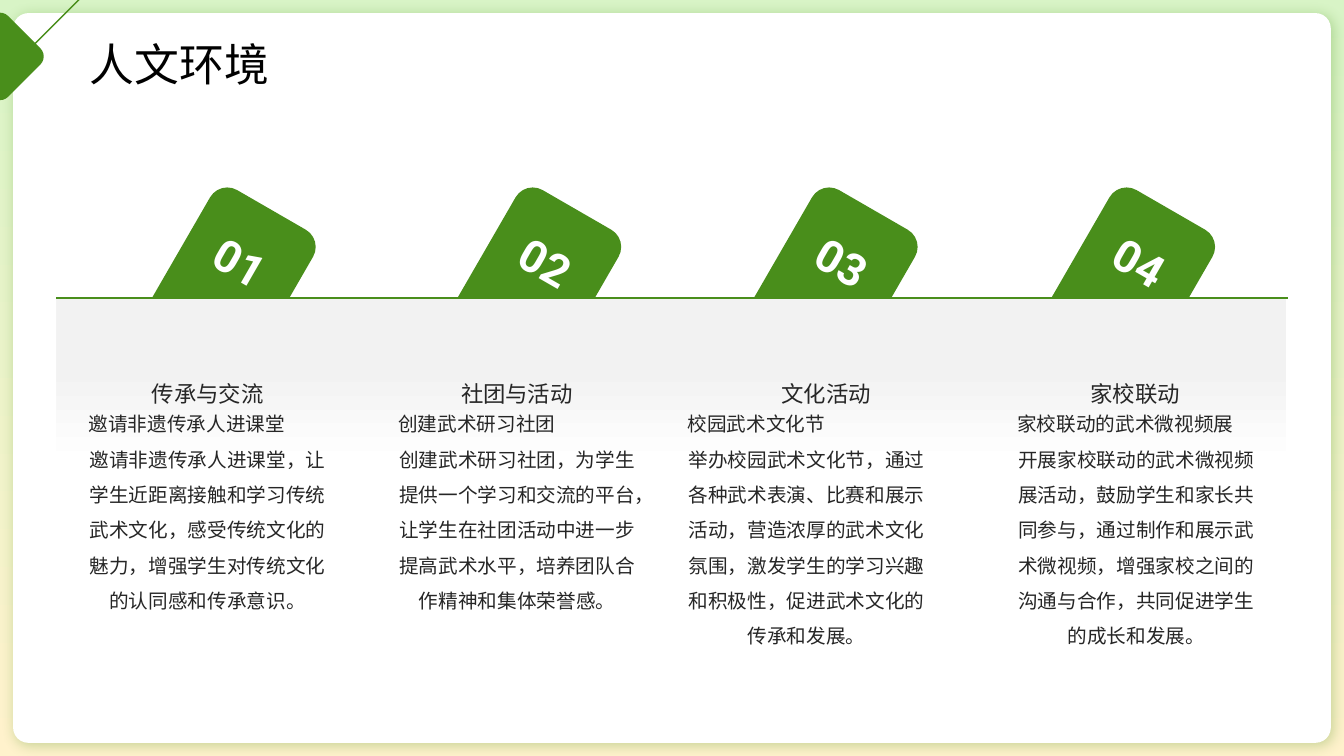
from lxml import etree
from pptx import Presentation
from pptx.dml.color import RGBColor
from pptx.enum import shapes, text
from pptx.oxml.ns import qn
from pptx.util import Inches, Pt

COLORS = {
    "green": "498E1B", "mint": "D8F4C6", "cream": "FFF2CC", "white": "FFFFFF",
    "mist": "F2F2F2", "ink": "262626", "black": "000000",
}
CJK, NUMERIC = "Noto Sans CJK SC", "Roboto"
LEFT, CENTER = text.PP_ALIGN.LEFT, text.PP_ALIGN.CENTER
RECT = shapes.MSO_SHAPE.RECTANGLE
ROUNDED = shapes.MSO_SHAPE.ROUNDED_RECTANGLE

# Tile left, body left, heading, topic, description
COLUMNS = [
    (1.57, 0.88, "传承与交流", "邀请非遗传承人进课堂",
     "邀请非遗传承人进课堂，让学生近距离接触和学习传统武术文化，"
     "感受传统文化的魅力，增强学生对传统文化的认同感和传承意识。"),
    (4.6, 3.95, "社团与活动", "创建武术研习社团",
     "创建武术研习社团，为学生提供一个学习和交流的平台，"
     "让学生在社团活动中进一步提高武术水平，培养团队合作精神和集体荣誉感。"),
    (7.54, 6.82, "文化活动", "校园武术文化节",
     "举办校园武术文化节，通过各种武术表演、比赛和展示活动，"
     "营造浓厚的武术文化氛围，激发学生的学习兴趣和积极性，促进武术文化的传承和发展。"),
    (10.49, 10.09, "家校联动", "家校联动的武术微视频展",
     "开展家校联动的武术微视频展活动，鼓励学生和家长共同参与，"
     "通过制作和展示武术微视频，增强家校之间的沟通与合作，共同促进学生的成长和发展。"),
]


def rgb(name):
    return RGBColor.from_string(COLORS[name])


def add_block(slide, kind, box, color=None, rotation=0):
    block = slide.shapes.add_shape(kind, *map(Inches, box))
    block.shadow.inherit = False
    block.line.fill.background()
    block.rotation = rotation
    if color:
        block.fill.solid()
        block.fill.fore_color.rgb = rgb(color)
    return block


def add_gradient_block(slide, box, stops):
    """Rectangle shaded upwards through (position, colour) stops."""
    block = add_block(slide, RECT, box)
    block.fill.gradient()
    block.fill.gradient_angle = 90
    for stop, (position, color) in zip(block.fill.gradient_stops, stops):
        stop.position = position
        stop.color.rgb = rgb(color)


def add_soft_shadow(block):
    effects = block._element.spPr.find(qn("a:effectLst"))
    shadow = etree.SubElement(
        effects, qn("a:outerShdw"), blurRad=str(Pt(10)), dist=str(Pt(3)),
        dir=str(45 * 60000), algn="tl", rotWithShape="0")
    tint = etree.SubElement(shadow, qn("a:srgbClr"), val=COLORS["green"])
    etree.SubElement(tint, qn("a:alpha"), val="30000")


def add_text(slide, box, lines, size, color="ink", font=CJK, bold=False,
             anchor=text.MSO_ANCHOR.TOP, rotation=0):
    """Text box; each line is (wording, alignment, line spacing)."""
    label = slide.shapes.add_textbox(*map(Inches, box))
    label.rotation = rotation
    frame = label.text_frame
    frame.word_wrap = True
    frame.vertical_anchor = anchor
    frame.margin_left = frame.margin_right = 0
    frame.margin_top = frame.margin_bottom = 0
    for i, (wording, alignment, spacing) in enumerate(lines):
        paragraph = frame.add_paragraph() if i else frame.paragraphs[0]
        paragraph.text = wording
        paragraph.alignment = alignment
        paragraph.line_spacing = spacing
        paragraph.font.size = Pt(size)
        paragraph.font.bold = bold
        paragraph.font.color.rgb = rgb(color)
        paragraph.font.name = font
        defaults = paragraph._p.pPr.find(qn("a:defRPr"))
        etree.SubElement(defaults, qn("a:ea"), typeface=font)


def add_baseline(slide):
    line = slide.shapes.add_connector(
        shapes.MSO_CONNECTOR.STRAIGHT,
        Inches(0.56), Inches(2.96), Inches(12.77), Inches(2.96))
    line.line.color.rgb = rgb("green")
    line.line.width = Pt(1.5)
    etree.SubElement(line._element.spPr, qn("a:effectLst"))


def add_corner(slide):
    outline = [(0.83, -0.05), (-0.71, -0.05), (-0.14, 0.51), (-0.04, 0.58),
               (0.06, 0.6), (0.17, 0.58), (0.27, 0.51)]
    points = [(Inches(x), Inches(y)) for x, y in outline]
    builder = slide.shapes.build_freeform(*points[0])
    builder.add_line_segments(points[1:], close=True)
    frame = builder.convert_to_shape()
    frame.shadow.inherit = False
    frame.fill.background()
    frame.line.color.rgb = rgb("green")
    frame.line.width = Pt(1)
    add_block(slide, ROUNDED, (-0.34, 0.22, 0.68, 0.68), "green", 45)


def main():
    deck = Presentation()
    deck.slide_width, deck.slide_height = Inches(13.33), Inches(7.5)
    slide = deck.slides.add_slide(deck.slide_layouts[6])

    # Backdrop and white card
    add_gradient_block(slide, (0, 0, 13.33, 7.5), [(0, "cream"), (1, "mint")])
    card = add_block(slide, ROUNDED, (0.13, 0.13, 13.07, 7.24), "white")
    card.adjustments[0] = 0.021
    add_soft_shadow(card)

    # Tilted tiles, cut off by the shaded panel
    for tile_left, *_ in COLUMNS:
        add_block(slide, ROUNDED, (tile_left, 1.94, 1.18, 2.13), "green", 30)
    add_gradient_block(slide, (0.56, 2.96, 12.2, 2.76),
                       [(0.4, "white"), (0.75, "mist")])
    add_baseline(slide)

    # Numbers, headings and descriptions
    for i, (tile_left, body_left, heading, topic, detail) in enumerate(COLUMNS):
        add_text(slide, (tile_left + 0.46, 2.29, 0.79, 0.47),
                 [(f"{i + 1:02}", CENTER, 1.1)], 32, "white", NUMERIC,
                 bold=True, rotation=30)
        add_text(slide, (0.88 + 3.067 * i, 3.33, 2.36, 0.71),
                 [(heading, CENTER, 1.3)], 16, anchor=text.MSO_ANCHOR.BOTTOM)
        add_text(slide, (body_left, 4.09, 2.36, 2.78),
                 [(topic, LEFT, 1.0), (detail, CENTER, 1.5)], 14)

    # Corner ornament and title
    add_corner(slide)
    add_text(slide, (0.89, 0.26, 8.51, 0.47), [("人文环境", LEFT, 1.5)], 32,
             "black", anchor=text.MSO_ANCHOR.MIDDLE)

    deck.save("out.pptx")


if __name__ == "__main__":
    main()
